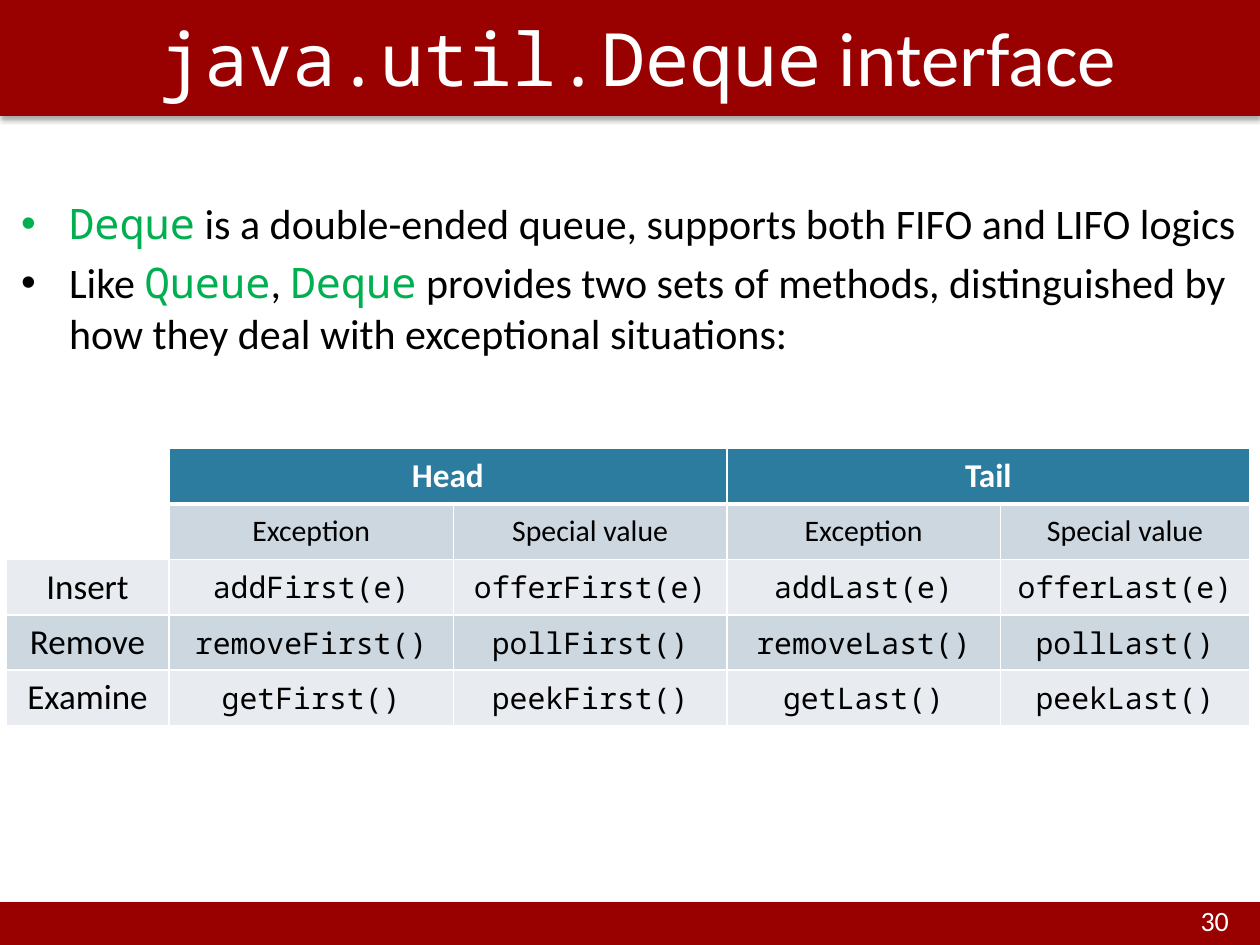
from pptx import Presentation
from pptx.dml.color import RGBColor
from pptx.enum.shapes import MSO_SHAPE
from pptx.enum.text import MSO_ANCHOR, PP_ALIGN
from pptx.oxml import parse_xml
from pptx.oxml.ns import nsdecls
from pptx.util import Inches, Pt

SANS, MONO = "Calibri", "Noto Sans Mono"
WHITE, BLACK, RED, GREEN = "FFFFFF", "000000", "990000", "00B050"
TEAL, DARK, LIGHT = "2C7C9F", "CDD7DF", "E8ECF0"
COLS, ROWS, UNIT = 100, 75, Inches(0.1)


def color(code):
    return RGBColor.from_string(code)


def grid(*cells):
    return [round(cell * UNIT) for cell in cells]


def node(text):
    return parse_xml(text.replace(">", f" {nsdecls('a')}>", 1))


def style(run, size, font, tint, bold=False):
    run.font.size = Pt(size)
    run.font.name = font
    run.font.bold = bold
    run.font.color.rgb = color(tint)


def write(para, parts):
    for text, *look in parts:
        run = para.add_run()
        run.text = text
        style(run, *look)


def add_text(slide, box):
    frame = slide.shapes.add_textbox(*grid(*box)).text_frame
    frame.word_wrap = True
    return frame


def add_bar(slide, box):
    bar = slide.shapes.add_shape(MSO_SHAPE.RECTANGLE, *grid(*box))
    bar.fill.solid()
    bar.fill.fore_color.rgb = color(RED)
    bar.line.fill.background()
    blur, dist = Pt(3.1), Pt(1.8)
    bar._element.spPr.append(node(
        f'<a:effectLst><a:outerShdw blurRad="{blur}" dist="{dist}" dir="5400000" rotWithShape="0">'
        f'<a:srgbClr val="{BLACK}"><a:alpha val="35000"/></a:srgbClr></a:outerShdw></a:effectLst>'))


def add_title(slide, box):
    frame = add_text(slide, box)
    frame.vertical_anchor = MSO_ANCHOR.MIDDLE
    para = frame.paragraphs[0]
    para.alignment = PP_ALIGN.CENTER
    write(para, [("java.util.Deque", 42, MONO, WHITE), (" interface", 44, SANS, WHITE)])


def add_page(slide, box):
    para = add_text(slide, box).paragraphs[0]
    write(para, [("30", 16, SANS, WHITE)])


def add_points(slide, box):
    code, prose = (24, MONO, GREEN), (24, SANS, BLACK)
    points = [
        [("Deque", *code),
         (" is a double-ended queue, supports both FIFO and LIFO logics", *prose)],
        [("Like ", *prose), ("Queue", *code), (", ", *prose), ("Deque", *code),
         (" provides two sets of methods, distinguished by how they deal with "
          "exceptional situations:", *prose)],
    ]
    frame = add_text(slide, box)
    for row, parts in enumerate(points):
        para = frame.add_paragraph() if row else frame.paragraphs[0]
        para.space_before = Pt(5)
        props = para._p.get_or_add_pPr()
        props.set("marL", str(Inches(0.38)))
        props.set("indent", str(-Inches(0.38)))
        props.append(node('<a:buFont typeface="Arial"/>'.replace("/>", "></a:buFont>")))
        props.append(node('<a:buChar char="•"></a:buChar>'))
        write(para, parts)


def edge(cell, row):
    props = cell._tc.get_or_add_tcPr()
    for side in "LRTB":
        thick = (side == "B" and row == 0) or (side == "T" and row == 1)
        props.append(node(
            f'<a:ln{side} w="{Pt(3 if thick else 1)}"><a:solidFill>'
            f'<a:srgbClr val="{WHITE}"/></a:solidFill></a:ln{side}>'))


def look(row, col):
    if row == 0:
        return 19, SANS, WHITE, True
    if col == 0:
        return 20, SANS, BLACK
    return 17, SANS if row == 1 else MONO, BLACK


def add_methods(slide, box):
    data = [
        ["", "Head", "", "Tail", ""],
        ["", "Exception", "Special value", "Exception", "Special value"],
        ["Insert", "addFirst(e)", "offerFirst(e)", "addLast(e)", "offerLast(e)"],
        ["Remove", "removeFirst()", "pollFirst()", "removeLast()", "pollLast()"],
        ["Examine", "getFirst()", "peekFirst()", "getLast()", "peekLast()"],
    ]
    fills = [TEAL, DARK, LIGHT, DARK, LIGHT]
    table = slide.shapes.add_table(len(data), len(data[0]), *grid(*box)).table
    table.first_row = table.horz_banding = False
    for col, width in zip(table.columns, grid(12.9, 22.6, 21.7, 21.7, 19.8)):
        col.width = width
    for row, texts in enumerate(data):
        for col, text in enumerate(texts):
            cell = table.cell(row, col)
            edge(cell, row)
            if row < 2 and col == 0:
                cell.fill.background()
            else:
                cell.fill.solid()
                cell.fill.fore_color.rgb = color(fills[row])
            cell.vertical_anchor = MSO_ANCHOR.MIDDLE
            para = cell.text_frame.paragraphs[0]
            para.alignment = PP_ALIGN.CENTER
            if text:
                write(para, [(text, *look(row, col))])
    for col in (1, 3):
        table.cell(0, col).merge(table.cell(0, col + 1))


def main():
    deck = Presentation()
    deck.slide_width, deck.slide_height = grid(COLS, ROWS)
    slide = deck.slides.add_slide(deck.slide_layouts[6])
    add_bar(slide, (0, 71.6, COLS, 3.4))
    add_bar(slide, (0, -0.1, COLS, 9.3))
    add_page(slide, (94.3, 71.2, 4.9, 3.7))
    add_title(slide, (3.9, -1.8, 93.5, 12.5))
    add_points(slide, (0.7, 15.2, 98.8, 18.2))
    add_methods(slide, (0.5, 35.6, 98.7, 22))
    deck.save("out.pptx")


if __name__ == "__main__":
    main()
